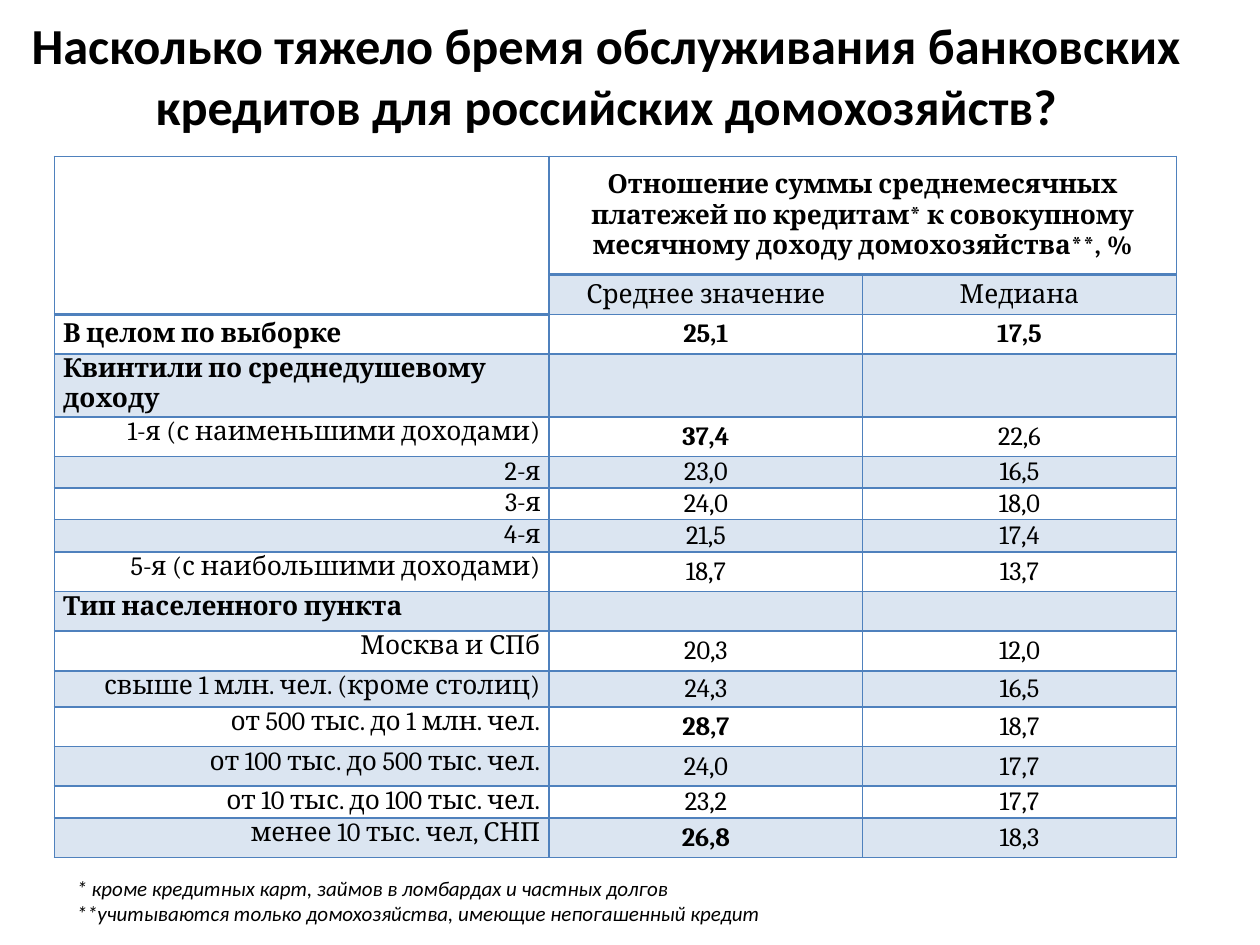
from pptx import Presentation
from pptx.dml.color import RGBColor
from pptx.enum.text import MSO_ANCHOR as Anchor, PP_ALIGN as Align
from pptx.oxml.ns import qn
from pptx.util import Pt
from lxml.etree import SubElement

COLORS = {"ink": "000000", "accent": "4F81BD"}
TITLE = "Насколько тяжело бремя обслуживания банковских кредитов для российских домохозяйств?"
RATIO = ("Отношение суммы среднемесячных платежей по кредитам* "
         "к совокупному месячному доходу домохозяйства**, %")
FOOTNOTES = [
    "* кроме кредитных карт, займов в ломбардах и частных долгов",
    "**учитываются только домохозяйства, имеющие непогашенный кредит",
]
COLUMN_WIDTHS = [282.8, 179.2, 179.2]
ROWS = [
    (67.7, "", RATIO, ""),
    (22.6, "", "Среднее значение", "Медиана"),
    (22.6, "В целом по выборке", "25,1", "17,5"),
    (22.6, "Квинтили по среднедушевому доходу", "", ""),
    (22.6, "1-я (с наименьшими доходами)", "37,4", "22,6"),
    (15.1, "2-я", "23,0", "16,5"),
    (13.7, "3-я", "24,0", "18,0"),
    (18.7, "4-я", "21,5", "17,4"),
    (22.6, "5-я (с наибольшими доходами)", "18,7", "13,7"),
    (22.6, "Тип населенного пункта", "", ""),
    (22.6, "Москва и СПб", "20,3", "12,0"),
    (20.8, "свыше 1 млн. чел. (кроме столиц)", "24,3", "16,5"),
    (22.6, "от 500 тыс. до 1 млн. чел.", "28,7", "18,7"),
    (22.6, "от 100 тыс. до 500 тыс. чел.", "24,0", "17,7"),
    (15.1, "от 10 тыс. до 100 тыс. чел.", "23,2", "17,7"),
    (22.6, "менее 10 тыс. чел, СНП", "26,8", "18,3"),
]
HEADER_EDGE = {(0, 0), (0, 1), (0, 2), (1, 0)}
TOTAL_ROW, SECTION_ROWS = 2, {2, 3, 9}
BOLD_CELLS = {(0, 1), (2, 1), (2, 2), (4, 1), (12, 1), (15, 1)} | {(r, 0) for r in SECTION_ROWS}


class SlideWriter:
    """Holds the style and the current slide and adds elements to it."""

    def __init__(self, slide):
        self.slide = slide
        self.heading_font, self.table_font = "Calibri", "Cambria"
        self.table_size = 15

    def style(self, paragraph, font, size, align, bold=False, italic=False):
        paragraph.alignment = align
        for run in paragraph.runs:
            run.font.name = font
            run.font.size = Pt(size)
            run.font.bold = bold
            run.font.italic = italic
            run.font.color.rgb = RGBColor.from_string(COLORS["ink"])

    def text(self, box, lines, size, align=Align.LEFT, anchor=Anchor.TOP, **emphasis):
        frame = self.slide.shapes.add_textbox(*map(Pt, box)).text_frame
        frame.word_wrap = True
        frame.vertical_anchor = anchor
        frame.text = "\n".join(lines)
        for paragraph in frame.paragraphs:
            self.style(paragraph, self.heading_font, size, align, **emphasis)

    def borders(self, cell, widths):
        properties = cell._tc.get_or_add_tcPr()
        for side, width in widths.items():
            line = SubElement(properties, qn(f"a:ln{side}"), w=str(Pt(width)))
            fill = SubElement(line, qn("a:solidFill"))
            SubElement(fill, qn("a:srgbClr"), val=COLORS["accent"])

    def shade(self, cell, banded):
        if not banded:
            cell.fill.background()
            return
        cell.fill.solid()
        cell.fill.fore_color.rgb = RGBColor.from_string(COLORS["accent"])
        tint = cell._tc.tcPr.find(qn("a:solidFill"))[0]
        SubElement(tint, qn("a:alpha"), val="20000")

    def cell(self, cell, row, column, content):
        is_label = column == 0
        cell.margin_left = cell.margin_right = Pt(5)
        cell.margin_top = cell.margin_bottom = 0
        cell.vertical_anchor = Anchor.TOP if is_label and row != TOTAL_ROW else Anchor.MIDDLE
        cell.text_frame.text = content
        paragraph = cell.text_frame.paragraphs[0]
        align = Align.CENTER
        if is_label:
            align = Align.LEFT if row in SECTION_ROWS else Align.RIGHT
        self.style(paragraph, self.table_font, self.table_size, align, (row, column) in BOLD_CELLS)
        if not content:
            SubElement(paragraph._p, qn("a:endParaRPr"), sz=str(self.table_size * 100))
        self.borders(cell, {
            "L": 1,
            "R": 1,
            "T": 2 if (row - 1, column) in HEADER_EDGE else 1,
            "B": 2 if (row, column) in HEADER_EDGE else 1,
        })
        self.shade(cell, row % 2 == 1 and (row, column) != (1, 0))

    def table(self, left, top, widths, rows):
        total_height = sum(height for height, *_ in rows)
        box = map(Pt, (left, top, sum(widths), total_height))
        table = self.slide.shapes.add_table(len(rows), len(widths), *box).table
        table.first_row = table.horz_banding = False
        for column, width in zip(table.columns, widths):
            column.width = Pt(width)
        for r, (height, *contents) in enumerate(rows):
            table.rows[r].height = Pt(height)
            for c, content in enumerate(contents):
                self.cell(table.cell(r, c), r, c, content)
        table.cell(0, 0).merge(table.cell(1, 0))
        table.cell(0, 1).merge(table.cell(0, 2))


def main():
    deck = Presentation()
    deck.slide_width, deck.slide_height = Pt(720), Pt(540)
    writer = SlideWriter(deck.slides.add_slide(deck.slide_layouts[6]))
    writer.text((8.6, 15.1, 676, 55.4), [TITLE], 28.8, Align.CENTER, Anchor.MIDDLE, bold=True)
    writer.table(31, 89.3, COLUMN_WIDTHS, ROWS)
    writer.text((36.7, 496.8, 595.4, 36), FOOTNOTES, 12, italic=True)
    deck.save("out.pptx")


if __name__ == "__main__":
    main()
